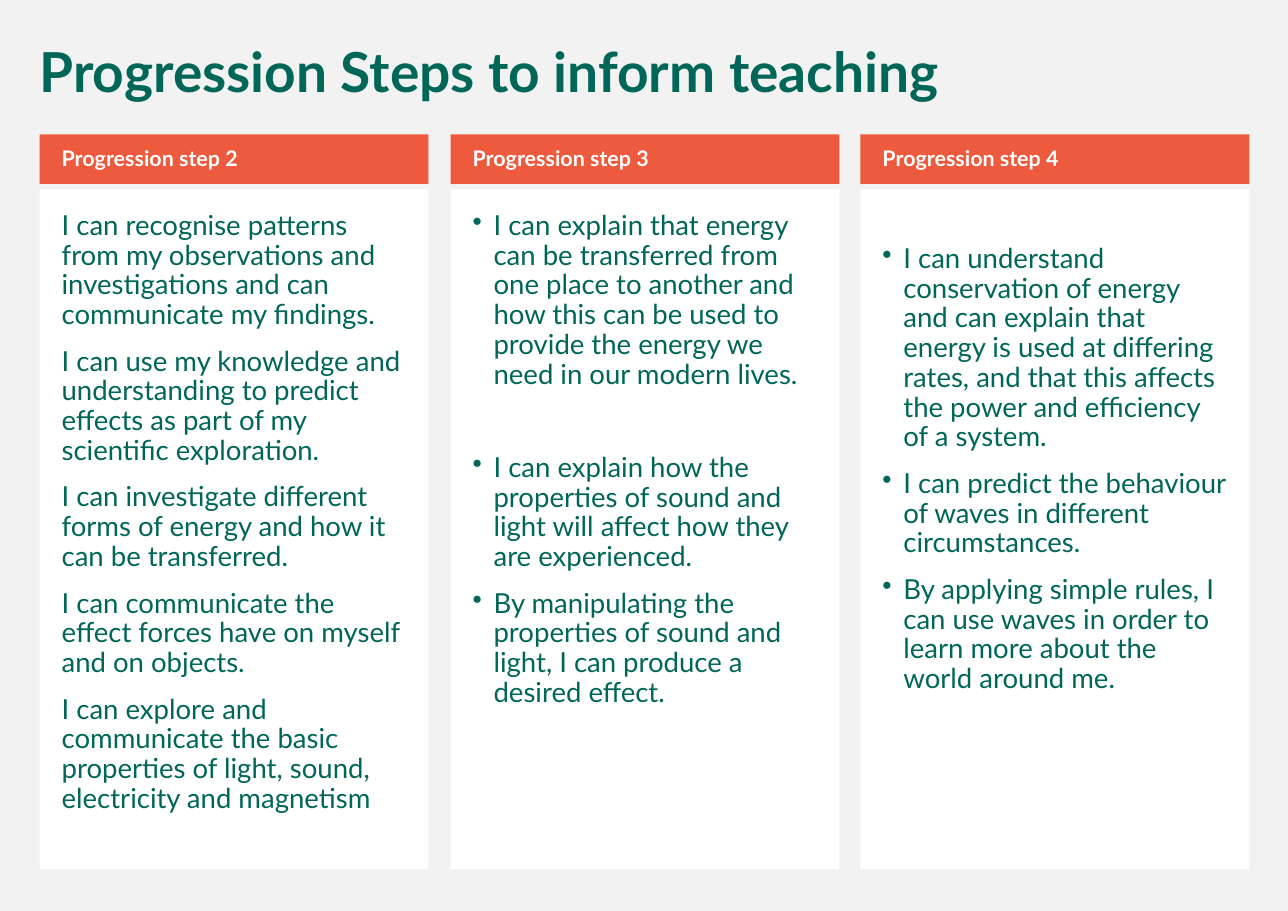
from dataclasses import dataclass

import lxml.etree
import pptx
import pptx.dml.color
import pptx.enum.shapes
import pptx.enum.text
import pptx.oxml.ns
import pptx.util

PX = 9144  # EMU per px, 100 px to the inch
GREEN, ORANGE, WHITE, GREY = "006758", "ED5A3E", "FFFFFF", "F2F2F2"
COLUMN_WIDTH = 353
HEADING_TOP, HEADING_HEIGHT = 122, 45
BODY_TOP, BODY_HEIGHT = 172, 617
BULLET_INDENT = 19
PARAGRAPH_GAP = 11


@dataclass
class Statement:
    text: str
    gap: float = PARAGRAPH_GAP


@dataclass
class Step:
    left: int
    heading: str
    statements: list[Statement]
    bulleted: bool = True
    top_inset: int = 20


@dataclass
class Style:
    size: int
    color: str
    bold: bool = False


TITLE_STYLE = Style(36, GREEN, True)
HEADING_STYLE = Style(14, WHITE, True)
BODY_STYLE = Style(18, GREEN)

STEPS = [
    Step(36, "Progression step 2", [
        Statement("I can recognise patterns from my observations and investigations "
                  "and can communicate my findings."),
        Statement("I can use my knowledge and understanding to predict effects "
                  "as part of my scientific exploration."),
        Statement("I can investigate different forms of energy and how it can be transferred."),
        Statement("I can communicate the effect forces have on myself and on objects."),
        Statement("I can explore and communicate the basic properties of light, sound, "
                  "electricity and magnetism"),
    ], bulleted=False),
    Step(409, "Progression step 3", [
        Statement("I can explain that energy can be transferred from one place to another "
                  "and how this can be used to provide the energy we need in our modern lives."),
        Statement("I can explain how the properties of sound and light will affect "
                  "how they are experienced.", gap=41.5),
        Statement("By manipulating the properties of sound and light, "
                  "I can produce a desired effect."),
    ]),
    Step(781, "Progression step 4", [
        Statement("I can understand conservation of energy and can explain that energy is used "
                  "at differing rates, and that this affects the power and efficiency of a system."),
        Statement("I can predict the behaviour of waves in different circumstances."),
        Statement("By applying simple rules, I can use waves in order to learn more "
                  "about the world around me."),
    ], top_inset=50),
]


def px(length: int) -> pptx.util.Emu:
    return pptx.util.Emu(length * PX)


def rgb(color: str) -> pptx.dml.color.RGBColor:
    return pptx.dml.color.RGBColor.from_string(color)


def apply(target, values: dict) -> None:
    for name, value in values.items():
        setattr(target, name, value)


def add_bullet(paragraph) -> None:
    properties = paragraph._p.get_or_add_pPr()
    properties.set("marL", str(px(BULLET_INDENT)))
    properties.set("indent", str(px(-BULLET_INDENT)))
    bullet = lxml.etree.SubElement(properties, pptx.oxml.ns.qn("a:buChar"))
    bullet.set("char", "•")


def write(shape, statements: list[Statement], style: Style, insets: tuple[int, int, int, int],
          middle: bool = False, bulleted: bool = False) -> None:
    """Fill a shape with paragraphs; insets run left, top, right, bottom."""
    left, top, right, bottom = map(px, insets)
    anchors = pptx.enum.text.MSO_ANCHOR
    frame = shape.text_frame
    apply(frame, {
        "word_wrap": True,
        "vertical_anchor": anchors.MIDDLE if middle else anchors.TOP,
        "margin_left": left, "margin_top": top,
        "margin_right": right, "margin_bottom": bottom,
    })
    for number, statement in enumerate(statements):
        paragraph = frame.add_paragraph() if number else frame.paragraphs[0]
        apply(paragraph, {
            "alignment": pptx.enum.text.PP_ALIGN.LEFT,
            "line_spacing": 0.9,
            "space_before": pptx.util.Pt(statement.gap),
        })
        if bulleted:
            add_bullet(paragraph)
        run = paragraph.add_run()
        run.text = statement.text
        apply(run.font, {"name": "Lato", "size": pptx.util.Pt(style.size), "bold": style.bold})
        run.font.color.rgb = rgb(style.color)


def add_panel(slide, left: int, top: int, height: int, color: str):
    panel = slide.shapes.add_shape(pptx.enum.shapes.MSO_SHAPE.RECTANGLE,
                                   px(left), px(top), px(COLUMN_WIDTH), px(height))
    panel.shadow.inherit = False
    panel.fill.solid()
    panel.fill.fore_color.rgb = rgb(color)
    panel.line.fill.background()
    return panel


def add_step(slide, step: Step) -> None:
    body = add_panel(slide, step.left, BODY_TOP, BODY_HEIGHT, WHITE)
    write(body, step.statements, BODY_STYLE, (20, step.top_inset, 20, 20),
          bulleted=step.bulleted)
    heading = add_panel(slide, step.left, HEADING_TOP, HEADING_HEIGHT, ORANGE)
    write(heading, [Statement(step.heading)], HEADING_STYLE, (20, 5, 10, 5), middle=True)


def main() -> None:
    presentation = pptx.Presentation()
    apply(presentation, {"slide_width": px(1169), "slide_height": px(827)})
    slide = presentation.slides.add_slide(presentation.slide_layouts[6])

    # Background
    slide.background.fill.solid()
    slide.background.fill.fore_color.rgb = rgb(GREY)

    # Step columns
    for step in STEPS:
        add_step(slide, step)

    # Title
    title = slide.shapes.add_textbox(px(26), px(36), px(1108), px(65))
    write(title, [Statement("Progression Steps to inform teaching")], TITLE_STYLE, (10, 5, 10, 5))

    presentation.save("out.pptx")


if __name__ == "__main__":
    main()
